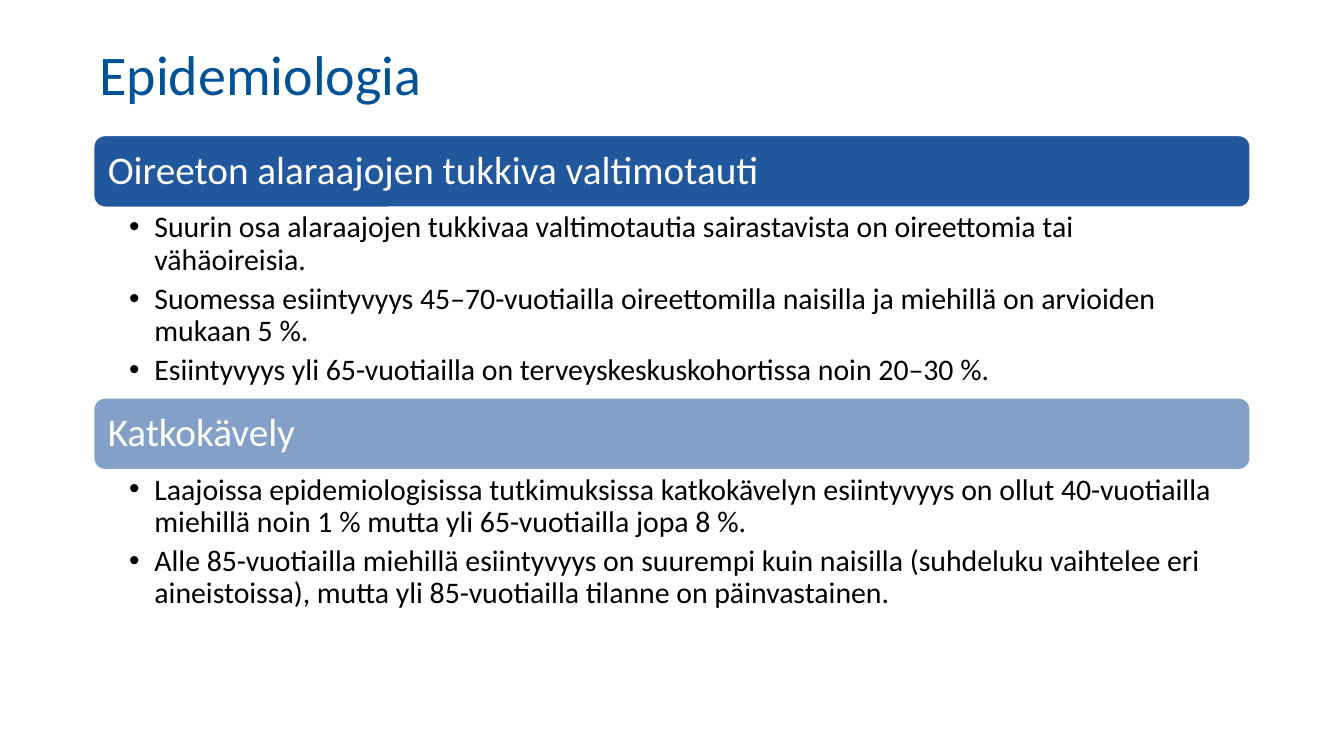
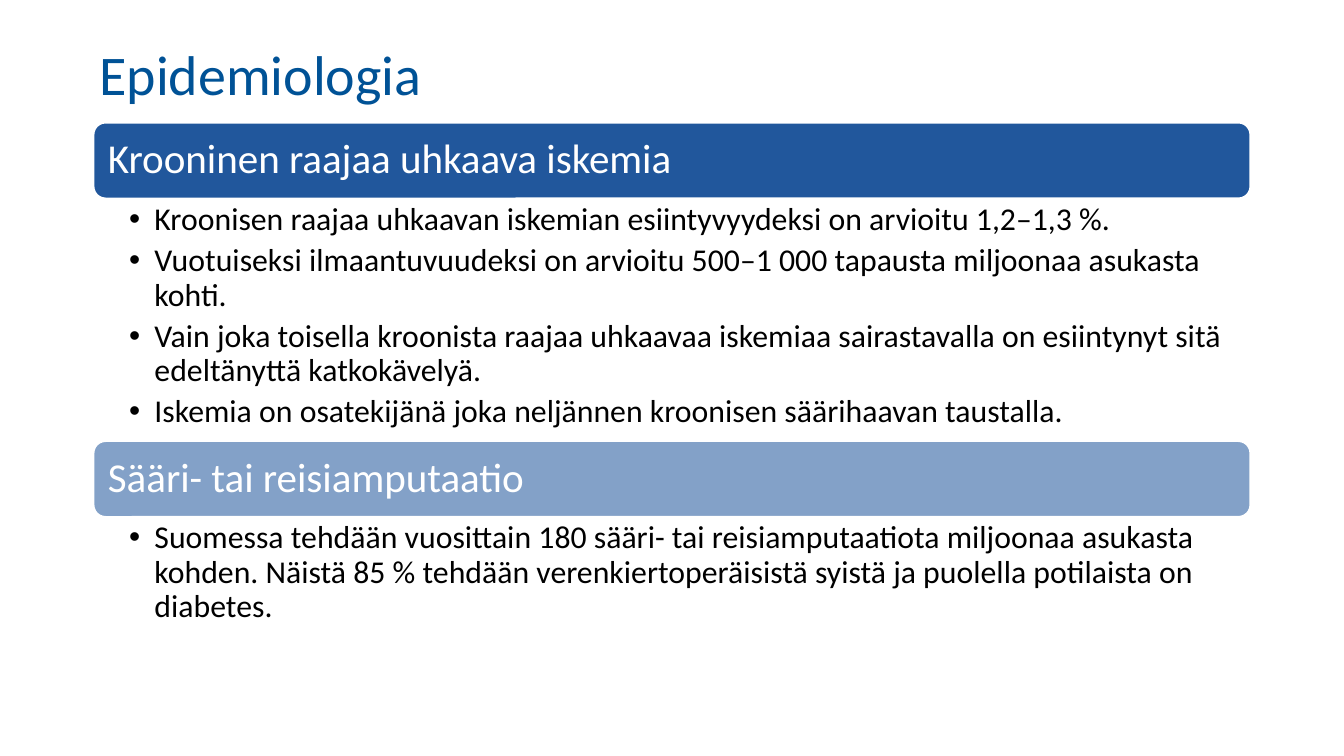
"""Build two slides on the epidemiology of peripheral artery disease."""
from dataclasses import dataclass

from lxml.etree import SubElement
from pptx import Presentation
from pptx.dml.color import RGBColor as Rgb
from pptx.enum.shapes import MSO_SHAPE as Shape
from pptx.enum.text import MSO_ANCHOR as Anchor, PP_ALIGN as Align
from pptx.oxml.ns import qn
from pptx.util import Cm, Pt


@dataclass(frozen=True)
class Theme:
    font: str = "Calibri"
    title: Rgb = Rgb(0x00, 0x52, 0x96)
    banner: Rgb = Rgb(0x09, 0x45, 0x92)
    white: Rgb = Rgb(0xFF, 0xFF, 0xFF)
    text: Rgb = Rgb(0x00, 0x00, 0x00)
    title_size: int = 30
    banner_opacity: tuple = (90, 50)


theme = Theme()
LEFT, WIDTH = Cm(1.75), Cm(21.9)

slides = [
    {
        "top": 2.54, "banner_height": 1.4, "banner_size": 21, "body_size": 16,
        "sections": [
            ("Oireeton alaraajojen tukkiva valtimotauti", 3.56, [
                "Suurin osa alaraajojen tukkivaa valtimotautia sairastavista on oireettomia tai vähäoireisia.",
                "Suomessa esiintyvyys 45–70-vuotiailla oireettomilla naisilla ja miehillä on arvioiden mukaan 5 %.",
                "Esiintyvyys yli 65-vuotiailla on terveyskeskuskohortissa noin 20–30 %.",
            ]),
            ("Katkokävely", 2.77, [
                "Laajoissa epidemiologisissa tutkimuksissa katkokävelyn esiintyvyys on ollut "
                "40-vuotiailla miehillä noin 1 % mutta yli 65-vuotiailla jopa 8 %.",
                "Alle 85-vuotiailla miehillä esiintyvyys on suurempi kuin naisilla (suhdeluku "
                "vaihtelee eri aineistoissa), mutta yli 85-vuotiailla tilanne on päinvastainen.",
            ]),
        ],
    },
    {
        "top": 2.3, "banner_height": 1.47, "banner_size": 22, "body_size": 17,
        "sections": [
            ("Krooninen raajaa uhkaava iskemia", 4.55, [
                "Kroonisen raajaa uhkaavan iskemian esiintyvyydeksi on arvioitu 1,2–1,3 %.",
                "Vuotuiseksi ilmaantuvuudeksi on arvioitu 500–1 000 tapausta miljoonaa asukasta kohti.",
                "Vain joka toisella kroonista raajaa uhkaavaa iskemiaa sairastavalla on "
                "esiintynyt sitä edeltänyttä katkokävelyä.",
                "Iskemia on osatekijänä joka neljännen kroonisen säärihaavan taustalla.",
            ]),
            ("Sääri- tai reisiamputaatio", 2.16, [
                "Suomessa tehdään vuosittain 180 sääri- tai reisiamputaatiota miljoonaa asukasta "
                "kohden. Näistä 85 % tehdään verenkiertoperäisistä syistä ja puolella potilaista "
                "on diabetes.",
            ]),
        ],
    },
]


def set_frame(shape, left, top, right, bottom, anchor=Anchor.TOP):
    frame = shape.text_frame
    frame.word_wrap = True
    frame.vertical_anchor = anchor
    frame.margin_left, frame.margin_top = Cm(left), Cm(top)
    frame.margin_right, frame.margin_bottom = Cm(right), Cm(bottom)
    return frame


def write(paragraph, text, size, color, spacing=1.0):
    paragraph.text = text
    paragraph.alignment = Align.LEFT
    paragraph.line_spacing = spacing
    paragraph.font.name = theme.font
    paragraph.font.size = Pt(size)
    paragraph.font.color.rgb = color


presentation = Presentation()
presentation.slide_width, presentation.slide_height = Cm(25.4), Cm(14.29)

for content in slides:
    slide = presentation.slides.add_slide(presentation.slide_layouts[6])
    title = slide.shapes.add_textbox(LEFT, Cm(0.61), WIDTH, Cm(1.55))
    frame = set_frame(title, 0.13, 0.13, 0.13, 0.13)
    write(frame.paragraphs[0], "Epidemiologia", theme.title_size, theme.title)

    top = content["top"]
    for (heading, body_height, bullets), opacity in zip(content["sections"], theme.banner_opacity):
        banner = slide.shapes.add_shape(
            Shape.ROUNDED_RECTANGLE, LEFT, Cm(top), WIDTH, Cm(content["banner_height"]))
        banner.shadow.inherit = False
        banner.fill.solid()
        banner.fill.fore_color.rgb = theme.banner
        color = banner.fill._xPr.find(qn("a:solidFill"))[0]
        SubElement(color, qn("a:alpha"), val=str(opacity * 1000))
        banner.line.color.rgb = theme.white
        banner.line.width = Pt(2)
        frame = set_frame(banner, 0.22, 0.22, 0.22, 0.22, Anchor.MIDDLE)
        write(frame.paragraphs[0], heading, content["banner_size"], theme.white, 0.9)
        top += content["banner_height"]

        body = slide.shapes.add_textbox(LEFT, Cm(top), WIDTH, Cm(body_height))
        frame = set_frame(body, 0.69, 0.07, 0.42, 0.07)
        for index, bullet in enumerate(bullets):
            paragraph = frame.add_paragraph() if index else frame.paragraphs[0]
            paragraph.level = 1
            properties = paragraph._p.get_or_add_pPr()
            properties.set("marL", str(Cm(0.48)))
            properties.set("indent", str(-Cm(0.48)))
            SubElement(properties, qn("a:buFont"), typeface="Arial")
            SubElement(properties, qn("a:buChar"), char="•")
            write(paragraph, bullet, content["body_size"], theme.text, 0.9)
            paragraph.space_after = Pt(3.75)
        top += body_height

presentation.save("out.pptx")
